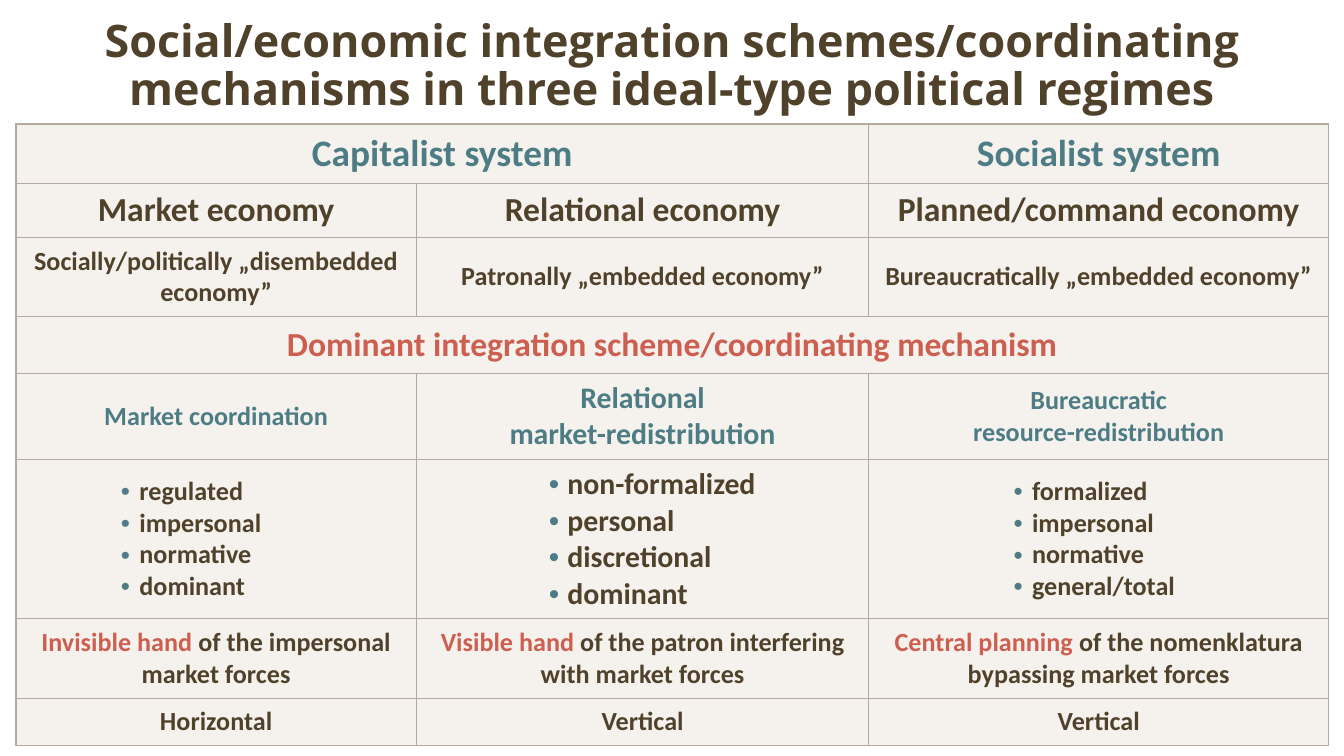
import pptx
import pptx.dml.color
import pptx.enum.text
import pptx.oxml
import pptx.oxml.ns
import pptx.util
from pptx.util import Cm

BROWN, TEAL, RED = "50412B", "4D7C85", "CD5F50"
CELL_FILL, BORDER = "EFEAE4", "B3A99D"
CENTER = pptx.enum.text.PP_ALIGN.CENTER
MIDDLE = pptx.enum.text.MSO_ANCHOR.MIDDLE

COLUMN_WIDTHS = [7.57, 8.55, 8.69]
ROW_HEIGHTS = [1.12, 1.02, 1.51, 1.06, 1.64, 3.0, 1.51, 0.89]


def rgb(code):
    return pptx.dml.color.RGBColor.from_string(code)


def drawing_element(tag, **attributes):
    element = pptx.oxml.parse_xml(f"<a:{tag} {pptx.oxml.ns.nsdecls('a')}/>")
    for name, value in attributes.items():
        element.set(name, str(value))
    return element


class SlideWriter:
    def __init__(self, page, font="Calibri", title_font="Open Sans"):
        self.page = page
        self.font = font
        self.title_font = title_font

    def style_run(self, span, size, color, font=None):
        span.font.name = font or self.font
        span.font.size = pptx.util.Pt(size)
        span.font.bold = True
        span.font.color.rgb = rgb(color)

    def title(self, text, left, top, width, height):
        box = self.page.shapes.add_textbox(Cm(left), Cm(top), Cm(width), Cm(height))
        frame = box.text_frame
        frame.word_wrap = True
        frame.vertical_anchor = MIDDLE
        frame.text = text
        para = frame.paragraphs[0]
        para.alignment = CENTER
        para.line_spacing = 0.9
        self.style_run(para.runs[0], 24, BROWN, self.title_font)

    def table(self, left, top):
        table = self.page.shapes.add_table(
            len(ROW_HEIGHTS), len(COLUMN_WIDTHS), Cm(left), Cm(top),
            Cm(sum(COLUMN_WIDTHS)), Cm(sum(ROW_HEIGHTS))).table
        table.first_row = table.horz_banding = False
        for column, width in zip(table.columns, COLUMN_WIDTHS):
            column.width = Cm(width)
        for row, height in zip(table.rows, ROW_HEIGHTS):
            row.height = Cm(height)
        return table

    def cell_look(self, table, row, column):
        """Fill a cell and border it, with heavier lines on the table's outline."""
        cell = table.cell(row, column)
        cell.vertical_anchor = MIDDLE
        cell.fill.solid()
        cell.fill.fore_color.rgb = rgb(CELL_FILL)
        properties = cell._tc.get_or_add_tcPr()
        color = properties.find(".//" + pptx.oxml.ns.qn("a:srgbClr"))
        color.append(drawing_element("alpha", val=60000))
        last_column = column + (cell.span_width if cell.is_merge_origin else 1)
        outer = {
            "lnL": column == 0,
            "lnR": last_column == len(COLUMN_WIDTHS),
            "lnT": row == 0,
            "lnB": row == len(ROW_HEIGHTS) - 1,
        }
        for index, (side, is_outer) in enumerate(outer.items()):
            line = drawing_element(side, w=pptx.util.Pt(1 if is_outer else 0.5))
            fill = drawing_element("solidFill")
            fill.append(drawing_element("srgbClr", val=BORDER))
            line.append(fill)
            properties.insert(index, line)

    def centered(self, cell, text, size, color):
        cell.text_frame.text = text
        for para in cell.text_frame.paragraphs:
            para.alignment = CENTER
            self.style_run(para.runs[0], size, color)

    def highlighted(self, cell, lead, rest, size):
        para = cell.text_frame.paragraphs[0]
        para.alignment = CENTER
        for text, color in ((lead + " ", RED), (rest, BROWN)):
            span = para.add_run()
            span.text = text
            self.style_run(span, size, color)

    def bullets(self, cell, items, size, margin, hanging=0.35):
        cell.text_frame.text = "\n".join(items)
        for para in cell.text_frame.paragraphs:
            properties = para._p.get_or_add_pPr()
            properties.set("marL", str(Cm(margin)))
            properties.set("indent", str(-Cm(hanging)))
            bullet_color = drawing_element("buClr")
            bullet_color.append(drawing_element("srgbClr", val=TEAL))
            properties.append(bullet_color)
            properties.append(drawing_element("buFont", typeface="Arial"))
            properties.append(drawing_element("buChar", char="•"))
            self.style_run(para.runs[0], size, BROWN)


def main():
    deck = pptx.Presentation()
    deck.slide_width, deck.slide_height = Cm(25.4), Cm(14.29)
    writer = SlideWriter(deck.slides.add_slide(deck.slide_layouts[6]))

    writer.title("Social/economic integration schemes/coordinating mechanisms "
                 "in three ideal-type political regimes", 0.3, 0, 24.8, 2.54)

    table = writer.table(0.3, 2.34)
    table.cell(0, 0).merge(table.cell(0, 1))
    table.cell(3, 0).merge(table.cell(3, 2))
    for row in range(len(ROW_HEIGHTS)):
        for column in range(len(COLUMN_WIDTHS)):
            writer.cell_look(table, row, column)

    # row: (colour, {column: (text, size)})
    centered_rows = {
        0: (TEAL, {0: ("Capitalist system", 20), 2: ("Socialist system", 20)}),
        1: (BROWN, {0: ("Market economy", 18), 1: ("Relational economy", 18),
                    2: ("Planned/command economy", 18)}),
        2: (BROWN, {0: ("Socially/politically „disembedded economy”", 14),
                    1: ("Patronally „embedded economy”", 14),
                    2: ("Bureaucratically „embedded economy”", 14)}),
        3: (RED, {0: ("Dominant integration scheme/coordinating mechanism", 18)}),
        4: (TEAL, {0: ("Market coordination", 14),
                   1: ("Relational\nmarket-redistribution", 16),
                   2: ("Bureaucratic\nresource-redistribution", 14)}),
        7: (BROWN, {0: ("Horizontal", 14), 1: ("Vertical", 14), 2: ("Vertical", 14)}),
    }
    for row, (color, entries) in centered_rows.items():
        for column, (text, size) in entries.items():
            writer.centered(table.cell(row, column), text, size, color)

    features = [
        (["regulated", "impersonal", "normative", "dominant"], 14, 2.08),
        (["non-formalized", "personal", "discretional", "dominant"], 16, 2.6),
        (["formalized", "impersonal", "normative", "general/total"], 14, 2.83),
    ]
    for column, (items, size, margin) in enumerate(features):
        writer.bullets(table.cell(5, column), items, size, margin)

    coordinators = [
        ("Invisible hand", "of the impersonal market forces"),
        ("Visible hand", "of the patron interfering with market forces"),
        ("Central planning", "of the nomenklatura bypassing market forces"),
    ]
    for column, (lead, rest) in enumerate(coordinators):
        writer.highlighted(table.cell(6, column), lead, rest, 14)

    deck.save("out.pptx")


if __name__ == "__main__":
    main()
